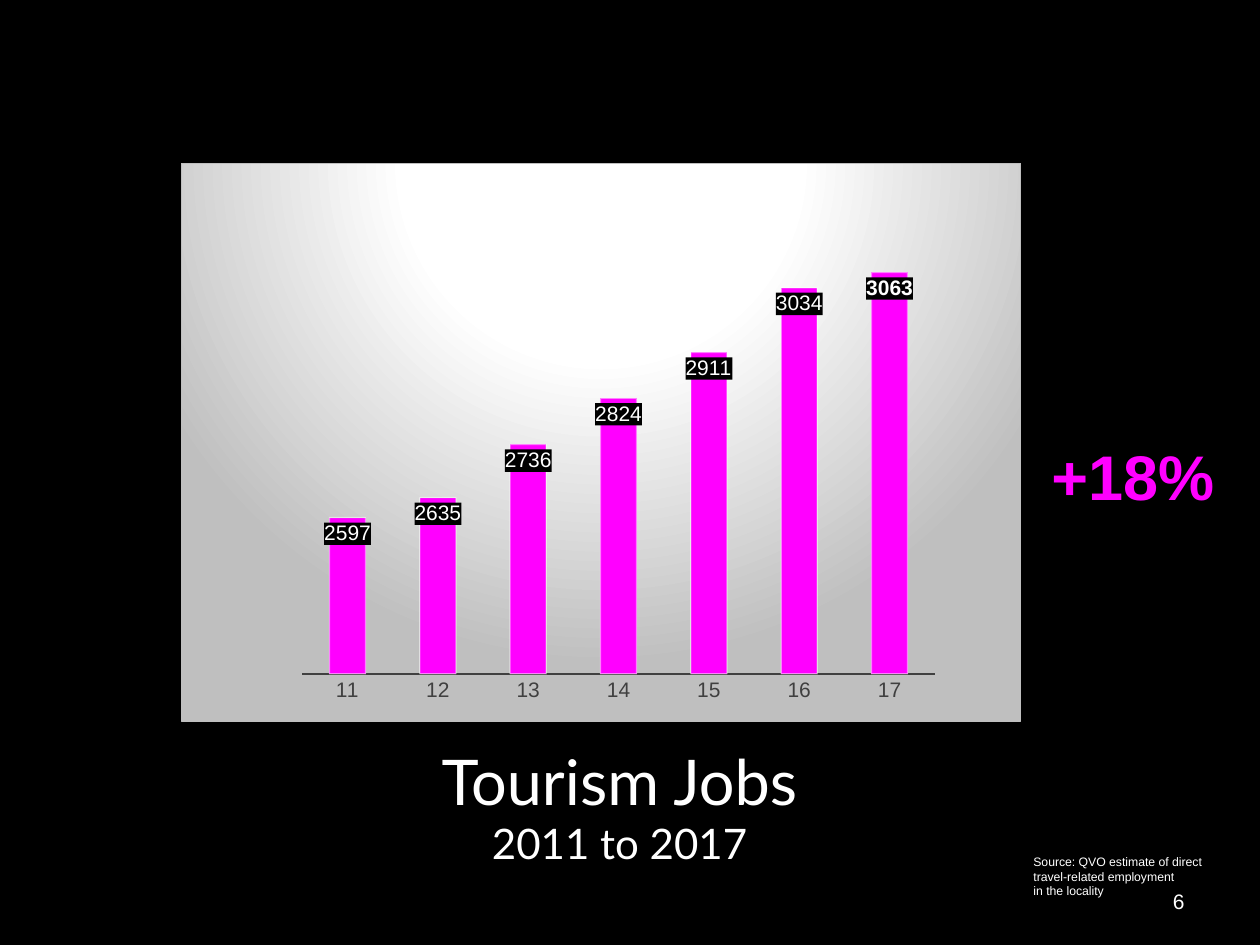
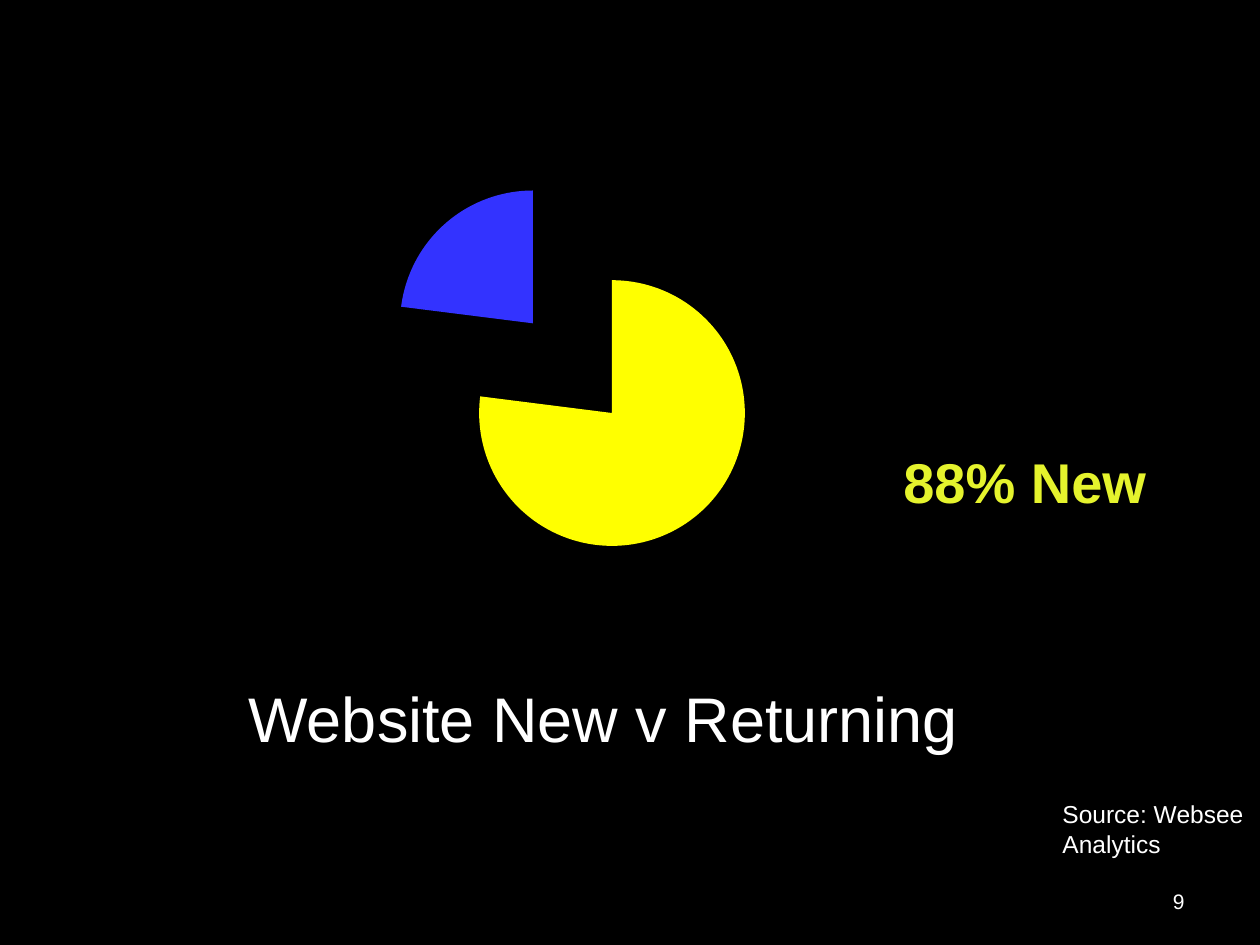
from lxml import etree
from pptx import Presentation
from pptx import util as u
from pptx.chart.data import CategoryChartData
from pptx.dml.color import RGBColor
from pptx.enum import chart as ch
from pptx.enum import text as t
from pptx.oxml import parse_xml
from pptx.oxml.ns import nsdecls, qn

# Shared look
SCALE = 914400 / 126
BLACK = RGBColor(0, 0, 0)
WHITE = RGBColor(255, 255, 255)
GREY = RGBColor(0x40, 0x40, 0x40)
PINK = RGBColor(255, 0, 255)
YELLOW = RGBColor(255, 255, 0)
LIME = RGBColor(0xE5, 0xF3, 0x2D)
BLUE = RGBColor(0x33, 0x33, 0xFF)
FONT = "Arial"

BACK = """<c:spPr %s>
<a:gradFill><a:gsLst>
<a:gs pos="0"><a:srgbClr val="FFFFFF"/></a:gs>
<a:gs pos="39000"><a:srgbClr val="FFFFFF"/></a:gs>
<a:gs pos="100000"><a:srgbClr val="BFBFBF"/></a:gs>
</a:gsLst><a:path path="circle">
<a:fillToRect l="50000" t="-80000" r="50000" b="180000"/></a:path></a:gradFill>
<a:ln w="9525"><a:solidFill><a:srgbClr val="BFBFBF"/></a:solidFill></a:ln>
</c:spPr>""" % nsdecls("c", "a")
LABEL = """<c:spPr %s><a:solidFill><a:srgbClr val="%s"/></a:solidFill>
</c:spPr>""" % (nsdecls("c", "a"), BLACK)


def px(*nums):
    return [u.Emu(round(n * SCALE)) for n in nums]


def style(font, size, color=WHITE, bold=False, name=FONT):
    font.size = u.Pt(size)
    font.color.rgb = color
    font.bold = bold
    font.name = name


def write(shape, lines, sizes, color=WHITE, bold=False, name=FONT,
          align=None, wrap=True):
    frame = shape.text_frame
    frame.text = "\n".join(lines)
    frame.word_wrap = wrap
    for para, size in zip(frame.paragraphs, sizes):
        para.alignment = align
        for run in para.runs:
            style(run.font, size, color, bold, name)
    return frame


def add_text(slide, box, lines, size, **look):
    shape = slide.shapes.add_textbox(*px(*box))
    return write(shape, lines, [size] * len(lines), **look)


def add_slide(prs, number, box, lines, sizes, **look):
    """Black slide with a caption-like title and a page number."""
    slide = prs.slides.add_slide(prs.slide_layouts[5])
    title = slide.shapes.title
    title.left, title.top, title.width, title.height = px(*box)
    frame = write(title, lines, sizes, align=t.PP_ALIGN.CENTER, **look)
    frame.auto_size = t.MSO_AUTO_SIZE.NONE
    frame.vertical_anchor = t.MSO_ANCHOR.TOP
    page = add_text(slide, (903, 876, 294, 50), [number], 12,
                    align=t.PP_ALIGN.RIGHT)
    page.vertical_anchor = t.MSO_ANCHOR.MIDDLE
    return slide


def add_chart(slide, kind, box, cats, vals, size, plot):
    data = CategoryChartData(number_format="0")
    data.categories = cats
    data.add_series("Series 1", vals)
    chart = slide.shapes.add_chart(kind, *px(*box), data).chart
    chart.has_title = False
    chart.has_legend = False
    style(chart.font, size)
    set_plot(chart, plot)
    return chart


def set_plot(chart, plot):
    """Fix the inner plot area as fractions of the chart."""
    area = chart._chartSpace.find(".//" + qn("c:plotArea"))
    for old in area.findall(qn("c:layout")):
        area.remove(old)
    layout = etree.Element(qn("c:layout"))
    manual = etree.SubElement(layout, qn("c:manualLayout"))
    marks = [("layoutTarget", "inner"), ("xMode", "edge"), ("yMode", "edge")]
    for tag, val in marks + list(zip("xywh", plot)):
        etree.SubElement(manual, qn("c:" + tag)).set("val", str(val))
    area.insert(0, layout)


def paint(part, color):
    part.format.fill.solid()
    part.format.fill.fore_color.rgb = color


def style_bars(chart):
    chart._chartSpace.find(qn("c:txPr")).addprevious(parse_xml(BACK))
    # Axes
    axis = chart.category_axis
    axis.major_tick_mark = ch.XL_TICK_MARK.NONE
    axis.format.line.color.rgb = GREY
    axis.format.line.width = u.Pt(1.5)
    style(axis.tick_labels.font, 12, GREY)
    scale = chart.value_axis
    scale.minimum_scale, scale.maximum_scale = 2300, 3200
    scale.has_major_gridlines = False
    scale.visible = False
    # Bars
    plot = chart.plots[0]
    plot.gap_width = 150
    plot.vary_by_categories = False
    bars = plot.series[0]
    paint(bars, PINK)
    edge = bars.format.line
    edge.width = u.Pt(0.75)
    edge.color.rgb = WHITE
    tint = bars._element.find(".//" + qn("a:ln")).find(".//" + qn("a:srgbClr"))
    etree.SubElement(tint, qn("a:alpha")).set("val", "50000")
    # Labels: only the last one is bold
    labels = bars.data_labels
    labels.show_value = True
    labels.position = ch.XL_LABEL_POSITION.INSIDE_END
    style(labels.font, 12, bold=True)
    for i in range(len(bars.values) - 1):
        label = bars.points[i].data_label
        style(label.font, 12)
        label.position = ch.XL_LABEL_POSITION.INSIDE_END
    for props in labels._element.findall(".//" + qn("c:txPr")):
        props.addprevious(parse_xml(LABEL))


def style_pie(chart, colors, gap):
    plot = chart.plots[0]
    plot.vary_by_categories = True
    pie = plot.series[0]
    for i, color in enumerate(colors):
        paint(pie.points[i], color)
    burst = etree.Element(qn("c:explosion"))
    burst.set("val", str(gap))
    pie._element.find(qn("c:dPt")).addprevious(burst)


def add_jobs(prs):
    slide = add_slide(prs, "6", (425, 736, 389, 140),
                      ["Tourism Jobs", "2011 to 2017"], [36, 24],
                      name="Lato", wrap=False)
    chart = add_chart(slide, ch.XL_CHART_TYPE.COLUMN_CLUSTERED,
                      (181, 163, 840, 559), [str(y) for y in range(11, 18)],
                      [2597, 2635, 2736, 2824, 2911, 3034, 3063], 10,
                      (0.144, 0.066, 0.754, 0.849))
    style_bars(chart)
    add_text(slide, (1021, 848, 194, 121),
             ["Source: QVO estimate of direct", "travel-related employment",
              "in the locality"], 7, wrap=False)
    add_text(slide, (1039, 431, 190, 89), ["+18%"], 36,
             color=PINK, bold=True, wrap=False)


def add_visits(prs):
    slide = add_slide(prs, "9", (73, 673, 1061, 150),
                      ["Website New v Returning"], [36])
    add_text(slide, (1050, 793, 231, 72), ["Source: Websee Analytics"], 14)
    chart = add_chart(slide, ch.XL_CHART_TYPE.PIE, (284, 157, 607, 452),
                      ["1", "2"], [77, 23], 18, (0.158, 0, 0.635, 0.935))
    style_pie(chart, [YELLOW, BLUE], 45)
    add_text(slide, (891, 441, 326, 81), ["88% New"], 32,
             color=LIME, bold=True)


def main():
    prs = Presentation()
    prs.slide_width, prs.slide_height = px(1260, 945)
    fill = prs.slide_master.background.fill
    fill.solid()
    fill.fore_color.rgb = BLACK
    add_jobs(prs)
    add_visits(prs)
    prs.save("out.pptx")


if __name__ == "__main__":
    main()
